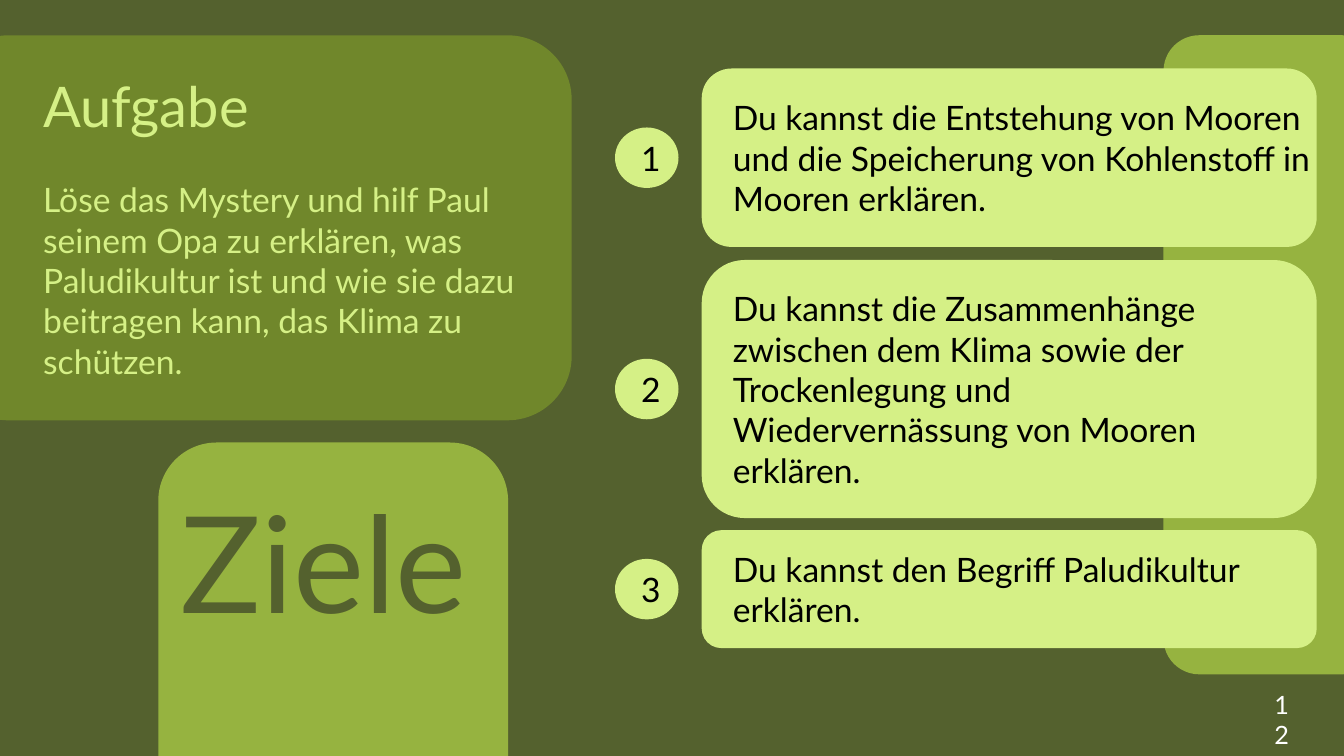
from pptx import Presentation
from pptx.dml.color import RGBColor
from pptx.enum.shapes import MSO_SHAPE
from pptx.enum.text import MSO_ANCHOR, PP_ALIGN
from pptx.util import Inches, Pt

# Content
TASK_HEADING = "Aufgabe"
TASK = ("Löse das Mystery und hilf Paul seinem Opa zu erklären, was Paludikultur "
        "ist und wie sie dazu beitragen kann, das Klima zu schützen.")
GOALS_HEADING = "Ziele"
PAGE_NUMBER = "12"
# Goal text, card top, card height, text width
GOALS = [
    ("Du kannst die Entstehung von Mooren und die Speicherung von Kohlenstoff in "
     "Mooren erklären.", 0.68, 1.77, 6.04),
    ("Du kannst die Zusammenhänge zwischen dem Klima sowie der Trockenlegung und "
     "Wiedervernässung von Mooren erklären.", 2.58, 2.56, 5.73),
    ("Du kannst den Begriff Paludikultur erklären.", 5.26, 1.17, 5.82),
]

THEME = {
    "font": "Lato",
    "background": "54612E", "panel": "96B340", "task": "70872B",
    "light": "D5F086", "black": "000000", "white": "FFFFFF",
    "page": 18, "body": 24, "heading": 40, "display": 96,
}

# Layout
CARD_LEFT, CARD_WIDTH = 6.96, 6.1
CARD_TEXT_LEFT = 7.17
BADGE_LEFT, BADGE_WIDTH, BADGE_HEIGHT = 6.1, 0.63, 0.6

deck = Presentation()
deck.slide_width, deck.slide_height = Inches(13.33), Inches(7.5)
slide = deck.slides.add_slide(deck.slide_layouts[6])
slide.background.fill.solid()
slide.background.fill.fore_color.rgb = RGBColor.from_string(THEME["background"])


def add_block(box, color, kind=MSO_SHAPE.ROUNDED_RECTANGLE):
    block = slide.shapes.add_shape(kind, *map(Inches, box))
    block.shadow.inherit = False
    block.fill.solid()
    block.fill.fore_color.rgb = RGBColor.from_string(THEME[color])
    block.line.fill.background()
    return block


def write(frame, text, *, size="body", color="black", align=PP_ALIGN.LEFT,
          anchor=MSO_ANCHOR.TOP, before=0, append=False):
    frame.word_wrap = True
    frame.vertical_anchor = anchor
    paragraph = frame.add_paragraph() if append else frame.paragraphs[0]
    paragraph.alignment = align
    if before:
        paragraph.space_before = Pt(before)
    run = paragraph.add_run()
    run.text = text
    run.font.name = THEME["font"]
    run.font.size = Pt(THEME[size])
    run.font.color.rgb = RGBColor.from_string(THEME[color])


def add_frame(*box):
    return slide.shapes.add_textbox(*map(Inches, box)).text_frame


# Page number and right panel
write(add_frame(12.54, 6.79, 0.48, 0.41), PAGE_NUMBER, size="page", color="white")
add_block((11.54, 0.35, 2.13, 6.34), "panel")

# Goal cards with a numbered badge at mid-height
for number, (goal, top, height, text_width) in enumerate(GOALS, start=1):
    add_block((CARD_LEFT, top, CARD_WIDTH, height), "light")
    write(add_frame(CARD_TEXT_LEFT, top, text_width, height), goal,
          anchor=MSO_ANCHOR.MIDDLE)
    badge_top = top + (height - BADGE_HEIGHT) / 2
    badge = add_block((BADGE_LEFT, badge_top, BADGE_WIDTH, BADGE_HEIGHT), "light",
                      MSO_SHAPE.FLOWCHART_CONNECTOR).text_frame
    badge.margin_left = Inches(0.08)
    badge.margin_right = badge.margin_top = badge.margin_bottom = 0
    write(badge, str(number), align=PP_ALIGN.CENTER, anchor=MSO_ANCHOR.MIDDLE)

# Goals heading
add_block((1.57, 4.39, 3.47, 3.97), "panel")
write(add_frame(1.69, 4.7, 4.72, 1.72), GOALS_HEADING, size="display",
      color="background")

# Task
add_block((-0.55, 0.35, 6.22, 3.82), "task")
task = add_frame(0.33, 0.66, 5.08, 3.2)
write(task, TASK_HEADING, size="heading", color="light")
write(task, TASK, color="light", before=29, append=True)

deck.save("out.pptx")
